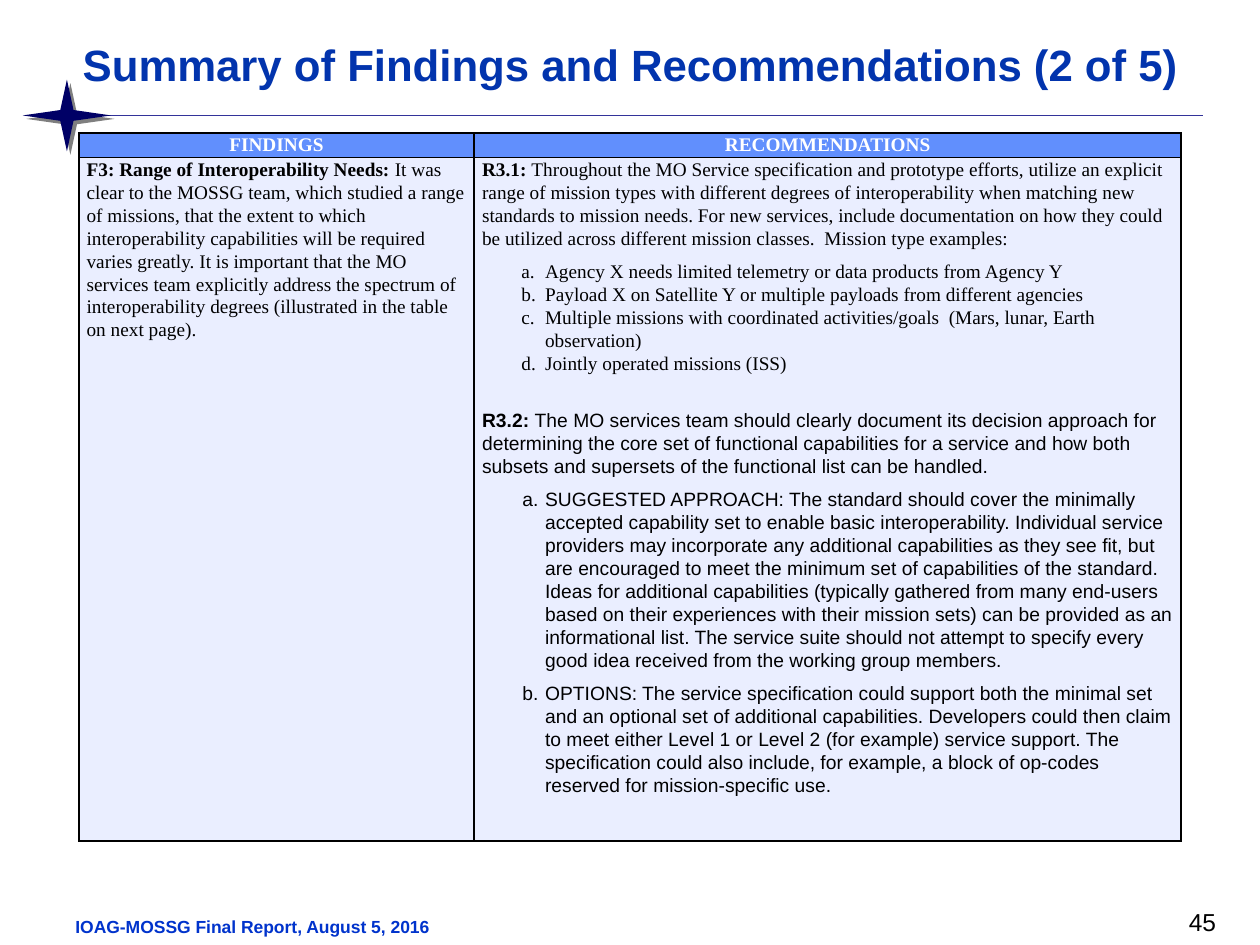
from dataclasses import dataclass

from lxml import etree
from pptx import Presentation
from pptx.dml.color import RGBColor
from pptx.enum.shapes import MSO_CONNECTOR, MSO_SHAPE
from pptx.enum.text import MSO_ANCHOR, PP_ALIGN
from pptx.oxml.ns import qn
from pptx.util import Pt

LEFT, MID, RIGHT = PP_ALIGN.LEFT, PP_ALIGN.CENTER, PP_ALIGN.RIGHT
TOP = MSO_ANCHOR.TOP
STAR, LINE = MSO_SHAPE.STAR_4_POINT, MSO_CONNECTOR.STRAIGHT


@dataclass(frozen=True)
class Theme:
    sans: str = "Arial"
    serif: str = "Times New Roman"
    title: str = "0234AD"
    foot: str = "0033CC"
    rule: str = "333399"
    star: str = "000066"
    head: str = "618FFD"
    body: str = "EAEEFF"
    ink: str = "000000"
    pale: str = "FFFFFF"
    big: float = 25
    num: float = 14
    text: float = 11
    small: float = 10


T = Theme()

FIND = ("F3: Range of Interoperability Needs: ",
        "It was clear to the MOSSG team, which studied a range of missions, that "
        "the extent to which interoperability capabilities will be required varies "
        "greatly. It is important that the MO services team explicitly address the "
        "spectrum of interoperability degrees (illustrated in the table on next page).")
NEEDS = ("R3.1: ",
         "Throughout the MO Service specification and prototype efforts, utilize an "
         "explicit range of mission types with different degrees of interoperability "
         "when matching new standards to mission needs. For new services, include "
         "documentation on how they could be utilized across different mission "
         "classes.  Mission type examples:")
CASES = ("Agency X needs limited telemetry or data products from Agency Y",
         "Payload X on Satellite Y or multiple payloads from different agencies",
         "Multiple missions with coordinated activities/goals  (Mars, lunar, Earth observation)",
         "Jointly operated missions (ISS)")
SCOPE = ("R3.2: ",
         "The MO services team should clearly document its decision approach for "
         "determining the core set of functional capabilities for a service and how "
         "both subsets and supersets of the functional list can be handled.")
PATHS = ("SUGGESTED APPROACH: The standard should cover the minimally accepted "
         "capability set to enable basic interoperability. Individual service providers "
         "may incorporate any additional capabilities as they see fit, but are encouraged "
         "to meet the minimum set of capabilities of the standard. Ideas for additional "
         "capabilities (typically gathered from many end-users based on their experiences "
         "with their mission sets) can be provided as an informational list. The service "
         "suite should not attempt to specify every good idea received from the working "
         "group members.",
         "OPTIONS: The service specification could support both the minimal set and an "
         "optional set of additional capabilities. Developers could then claim to meet "
         "either Level 1 or Level 2 (for example) service support. The specification "
         "could also include, for example, a block of op-codes reserved for "
         "mission-specific use.")


def rgb(tint):
    return RGBColor.from_string(tint)


def style(para, face, size, tint, bold=None, align=LEFT):
    font = para.font
    font.name, font.size, font.bold = face, Pt(size), bold
    font.color.rgb = rgb(tint)
    para.alignment = align


def add_title(slide, box, text):
    shape = slide.shapes.title
    shape.left, shape.top, shape.width, shape.height = map(Pt, box)
    frame = shape.text_frame
    frame.text, frame.vertical_anchor, frame.word_wrap = text, TOP, True
    para = frame.paragraphs[0]
    style(para, T.sans, T.big, T.title, True, MID)
    para.line_spacing = 0.9
    para.space_before = Pt(0)


def add_rule(slide, box):
    x, y, w, h = box
    mid = y + h / 2
    line = slide.shapes.add_connector(LINE, Pt(x + 25), Pt(mid), Pt(x + w), Pt(mid))
    line.line.color.rgb = rgb(T.rule)
    line.line.width = Pt(0.13)
    etree.SubElement(line._element.spPr, qn("a:effectLst"))
    star = slide.shapes.add_shape(STAR, Pt(x), Pt(y), Pt(50.5), Pt(h))
    star.adjustments[0] = 0.106
    star.fill.solid()
    star.fill.fore_color.rgb = rgb(T.star)
    star.line.fill.background()
    star.shadow.inherit = False
    glow = star._element.spPr.find(qn("a:effectLst"))
    cast = etree.SubElement(glow, qn("a:outerShdw"), blurRad="0",
                            dist=str(Pt(2.8)), dir=str(45 * 60000))
    tone = etree.SubElement(cast, qn("a:srgbClr"), val=T.ink)
    etree.SubElement(tone, qn("a:alpha"), val="50000")


def add_note(slide, box, text, size, tint, bold, align, wrap):
    frame = slide.shapes.add_textbox(*map(Pt, box)).text_frame
    frame.word_wrap = wrap
    frame.text = text
    style(frame.paragraphs[0], T.sans, size, tint, bold, align)


def add_foot(slide, box):
    x, y, w, h = box
    add_note(slide, (x, y + 5, 220, 19.5), "IOAG-MOSSG Final Report, August 5, 2016",
             T.small, T.foot, True, LEFT, False)
    add_note(slide, (x + w - 168, y, 168, h), "45", T.num, T.ink, False, RIGHT, True)


def edge(cell):
    props = cell._tc.get_or_add_tcPr()
    for side in ("lnL", "lnR", "lnT", "lnB"):
        line = etree.SubElement(props, qn(f"a:{side}"), w=str(Pt(1)))
        fill = etree.SubElement(line, qn("a:solidFill"))
        etree.SubElement(fill, qn("a:srgbClr"), val=T.ink)


def paint(cell, tint):
    edge(cell)
    cell.fill.solid()
    cell.fill.fore_color.rgb = rgb(tint)
    cell.margin_left = cell.margin_right = Pt(4.5)
    cell.margin_top = cell.margin_bottom = 0
    cell.vertical_anchor = TOP


def add_para(frame, parts, face, after=0, before=0, level=0, hang=0):
    first = frame.paragraphs[0]
    para = first if not first.runs else frame.add_paragraph()
    for part in parts:
        para.add_run().text = part
    if len(parts) > 1:
        para.runs[0].font.bold = True
    style(para, face, T.text, T.ink, False)
    para.level, para.line_spacing = level, 1.07
    para.space_before, para.space_after = Pt(before), Pt(after)
    props = para._p.get_or_add_pPr()
    props.set("marL", str(Pt(36 if hang else 0)))
    props.set("indent", str(Pt(-hang)))
    if hang:
        mark = etree.Element(qn("a:buAutoNum"), type="alphaLcPeriod")
        props.find(qn("a:defRPr")).addprevious(mark)


def add_grid(slide, box):
    x, y, w, h = box
    grid = slide.shapes.add_table(2, 2, Pt(x), Pt(y), Pt(w), Pt(h)).table
    grid.first_row = grid.horz_banding = False
    grid.columns[0].width, grid.columns[1].width = Pt(226), Pt(w - 226)
    grid.rows[0].height, grid.rows[1].height = Pt(13), Pt(h - 13)
    for col, name in enumerate(("FINDINGS", "RECOMMENDATIONS")):
        head = grid.cell(0, col)
        paint(head, T.head)
        paint(grid.cell(1, col), T.body)
        head.text_frame.text = name
        para = head.text_frame.paragraphs[0]
        style(para, T.serif, T.text, T.pale, True, MID)
        para.line_spacing = 1.07
    add_para(grid.cell(1, 0).text_frame, FIND, T.serif)
    frame = grid.cell(1, 1).text_frame
    add_para(frame, NEEDS, T.serif, after=6)
    for case in CASES:
        add_para(frame, [case], T.serif, hang=13.5)
    add_para(frame, SCOPE, T.sans, after=6, before=19.5, level=1)
    for way in PATHS:
        add_para(frame, [way], T.sans, after=6, level=1, hang=13)


def main():
    deck = Presentation()
    deck.slide_width, deck.slide_height = Pt(720), Pt(540)
    slide = deck.slides.add_slide(deck.slide_layouts[5])
    add_title(slide, (36, 21.6, 648, 44.6),
              "Summary of Findings and Recommendations (2 of 5)")
    add_rule(slide, (13, 45.5, 674.5, 41))
    add_foot(slide, (36, 515, 666, 18))
    add_grid(slide, (45, 76, 630, 398))
    deck.save("out.pptx")


if __name__ == "__main__":
    main()
